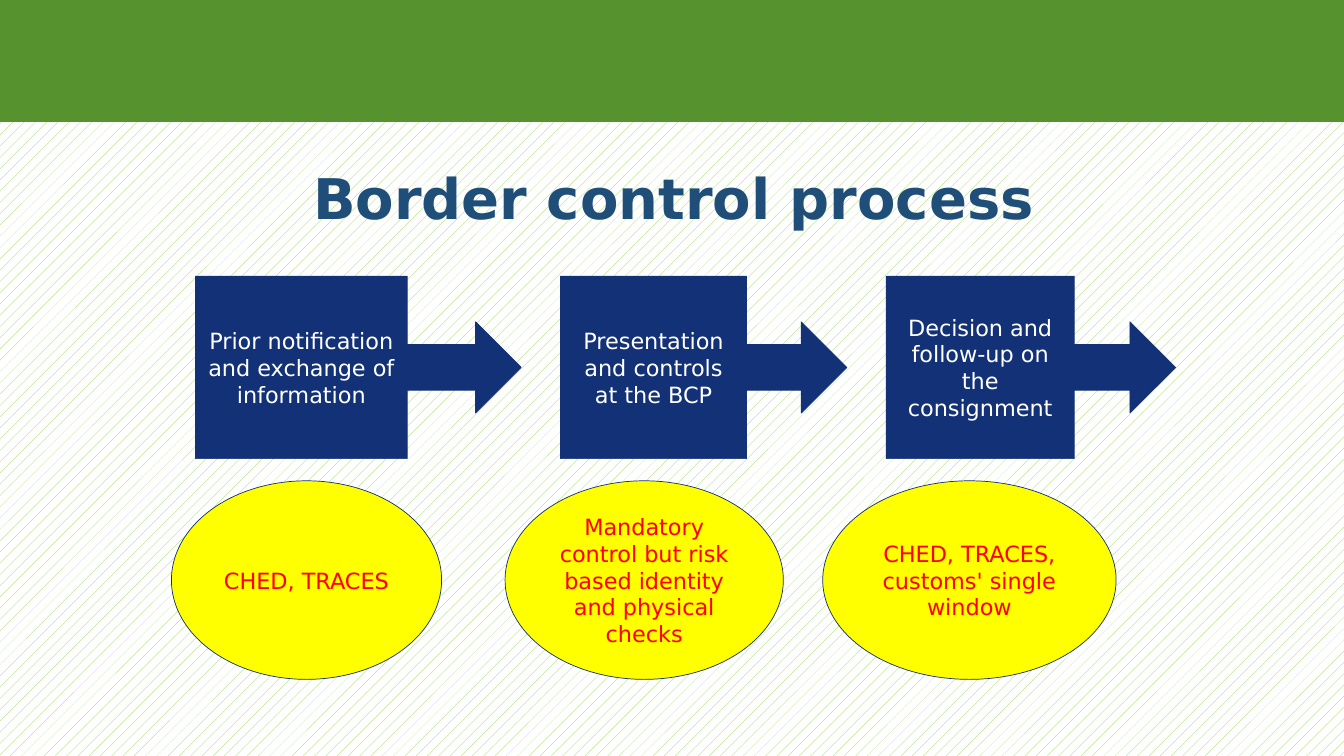
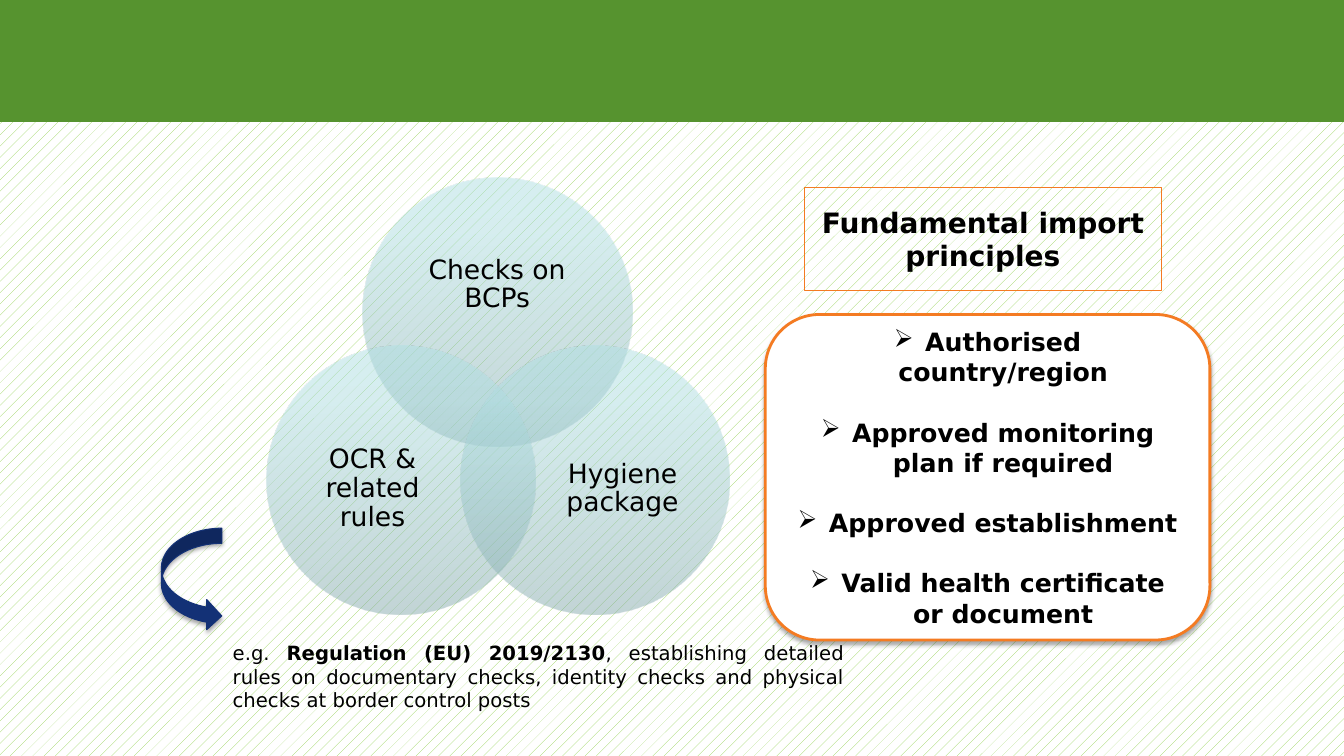
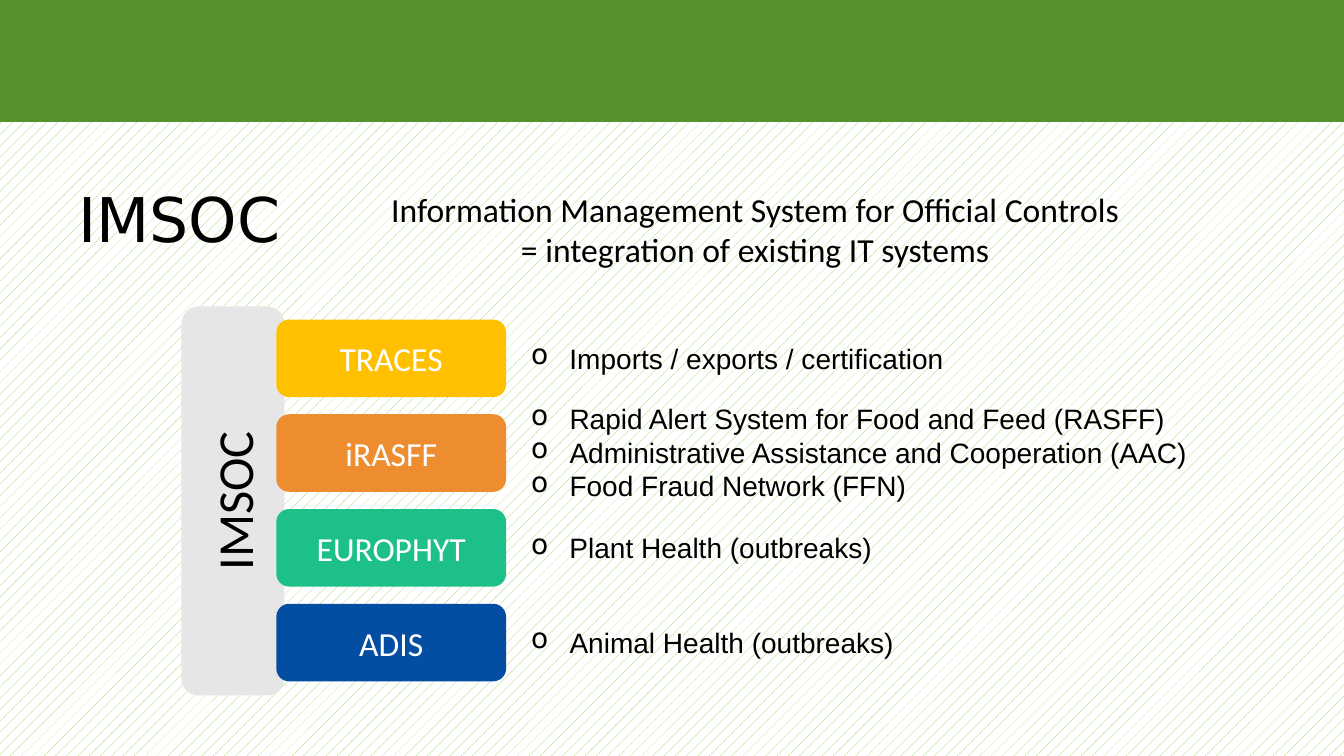
from pptx import Presentation
from pptx.dml.color import RGBColor
from pptx.enum.dml import MSO_PATTERN
from pptx.enum.shapes import MSO_SHAPE as Shape
from pptx.enum.text import MSO_ANCHOR as Anchor, MSO_AUTO_SIZE as AutoSize, PP_ALIGN as Align
from pptx.oxml import parse_xml
from pptx.oxml.ns import nsdecls, qn
from pptx.util import Inches, Pt

# Palette and fonts
BLACK = RGBColor(0x00, 0x00, 0x00)
WHITE = RGBColor(0xFF, 0xFF, 0xFF)
RED = RGBColor(0xFF, 0x00, 0x00)
YELLOW = RGBColor(0xFF, 0xFF, 0x00)
NAVY = RGBColor(0x13, 0x31, 0x76)
TITLE_BLUE = RGBColor(0x1F, 0x4E, 0x79)
BAND_GREEN = RGBColor(0x56, 0x93, 0x2F)
HATCH_GREEN = RGBColor(0x92, 0xD0, 0x50)
ORANGE = RGBColor(0xF4, 0x7B, 0x22)
GREY = RGBColor(0xE7, 0xE6, 0xE6)
GOLD = RGBColor(0xFF, 0xC0, 0x00)
AMBER = RGBColor(0xED, 0x8D, 0x2F)
TEAL = RGBColor(0x1E, 0xC0, 0x8A)
BLUE = RGBColor(0x03, 0x4E, 0xA2)
VENN_STOPS = [(0, RGBColor(0x87, 0xAB, 0xAE)), (80, RGBColor(0xAF, 0xDE, 0xE2)),
              (100, RGBColor(0xAF, 0xE0, 0xE4))]
SANS = "DejaVu Sans"
CALIBRI = "Calibri"
ARIAL = "Arial"
TITLE_ONLY, BLANK = 5, 6


def inches(values):
    return [Inches(value) for value in values]


# Text
def add_bullet(para, char, indent):
    props = para._p.get_or_add_pPr()
    props.set("marL", str(Inches(indent)))
    props.set("indent", str(-Inches(indent)))
    props.append(parse_xml(f'<a:buChar {nsdecls("a")} char="{char}"/>'))


def write(frame, paragraphs, size, font=SANS, color=BLACK, bold=False, align=Align.CENTER,
          spacing=None, bullet=None, indent=0, gap=0):
    """Each paragraph is a string, or a list of (text, bold) runs."""
    for index, content in enumerate(paragraphs):
        para = frame.add_paragraph() if index else frame.paragraphs[0]
        para.alignment = align
        if spacing:
            para.line_spacing = spacing
        if index and gap:
            para.space_before = Pt(gap)
        if bullet:
            add_bullet(para, bullet, indent)
        runs = [(content, bold)] if isinstance(content, str) else content
        for text, heavy in runs:
            span = para.add_run()
            span.text = text
            span.font.size = Pt(size)
            span.font.name = font
            span.font.bold = heavy
            span.font.color.rgb = color


def add_title(slide, text, place, **style):
    title = slide.shapes.title
    title.left, title.top, title.width, title.height = inches(place)
    title.text_frame.auto_size = AutoSize.NONE
    title.text_frame.vertical_anchor = Anchor.MIDDLE
    write(title.text_frame, [text], spacing=0.9, **style)


def add_text(shapes, place, paragraphs, size, wrap=True, anchor=Anchor.TOP, inset=None, **style):
    box = shapes.add_textbox(*inches(place))
    frame = box.text_frame
    frame.word_wrap = wrap
    frame.vertical_anchor = anchor
    if inset is not None:
        frame.margin_left = frame.margin_right = Inches(inset)
        frame.margin_top = frame.margin_bottom = Inches(inset)
    write(frame, paragraphs, size, **style)


# Shapes
def add_figure(shapes, kind, place, fill=None, line=None, weight=0.5):
    figure = shapes.add_shape(kind, *inches(place))
    figure.shadow.inherit = False
    if fill is None:
        figure.fill.background()
    else:
        figure.fill.solid()
        figure.fill.fore_color.rgb = fill
    if line is None:
        figure.line.fill.background()
    else:
        figure.line.color.rgb = line
        figure.line.width = Pt(weight)
    return figure


def add_label(figure, paragraphs, size, **style):
    figure.text_frame.word_wrap = True
    figure.text_frame.vertical_anchor = Anchor.MIDDLE
    write(figure.text_frame, paragraphs, size, **style)


def drop_shadow(figure):
    effects = figure.element.spPr.find(qn("a:effectLst"))
    effects.append(parse_xml(
        f'<a:outerShdw {nsdecls("a")} blurRad="40000" dist="23000" dir="5400000" rotWithShape="0">'
        '<a:srgbClr val="000000"><a:alpha val="35000"/></a:srgbClr></a:outerShdw>'))


def fade_upwards(figure, stops, opacity):
    marks = "".join(
        f'<a:gs pos="{position * 1000}"><a:srgbClr val="{color}">'
        f'<a:alpha val="{opacity * 1000}"/></a:srgbClr></a:gs>' for position, color in stops)
    properties = figure.element.spPr
    properties.replace(properties.find(qn("a:noFill")), parse_xml(
        f'<a:gradFill {nsdecls("a")} rotWithShape="1"><a:gsLst>{marks}</a:gsLst>'
        '<a:lin ang="16200000" scaled="0"/></a:gradFill>'))


# Shared look: hatched background and green band on the master
def style_master(deck, slide):
    master = deck.slide_master
    fill = master.background.fill
    fill.patterned()
    fill.pattern = MSO_PATTERN.PERCENT_10
    fill.fore_color.rgb = HATCH_GREEN
    fill.back_color.rgb = WHITE
    band = add_figure(slide.shapes, Shape.RECTANGLE, (0, -0.03, 13.33, 1.24), BAND_GREEN)
    master.shapes.element.insert(2, band.element)


def build_process(slide):
    add_title(slide, "Border control process", (2.18, 1.27, 9, 1.45),
              size=40, color=TITLE_BLUE, bold=True)
    # Step left and width, step text, note left and width, note text
    steps = [
        (1.94, 3.23, "Prior notification and exchange of information",
         1.7, 2.68, "CHED, TRACES"),
        (5.56, 2.84, "Presentation and controls at the BCP",
         5.01, 2.76, "Mandatory control but risk based identity and physical checks"),
        (8.79, 2.87, "Decision and follow-up on the consignment",
         8.16, 2.91, "CHED, TRACES, customs' single window"),
    ]
    for left, width, step, note_left, note_width, note in steps:
        callout = add_figure(slide.shapes, Shape.RIGHT_ARROW_CALLOUT,
                             (left, 2.74, width, 1.81), NAVY, NAVY)
        add_label(callout, [step], 16, color=WHITE)
        oval = add_figure(slide.shapes, Shape.OVAL,
                          (note_left, 4.77, note_width, 1.97), YELLOW, NAVY)
        add_label(oval, [note], 16, color=RED)


def build_principles(slide):
    # Overlapping circles
    venn = slide.shapes.add_group_shape().shapes
    circles = [
        (3.6, 1.76, (4.24, 2.4, 1.38, 0.85), "Checks on BCPs"),
        (4.57, 3.43, (5.61, 4.33, 1.13, 1.04), "Hygiene package"),
        (2.64, 3.43, (3.13, 4.33, 1.13, 1.04), "OCR & related rules"),
    ]
    for left, top, label_place, label in circles:
        circle = add_figure(venn, Shape.OVAL, (left, top, 2.67, 2.67))
        fade_upwards(circle, VENN_STOPS, 50)
        add_text(venn, label_place, [label], 19, anchor=Anchor.MIDDLE, inset=0, spacing=0.9)

    # Principles
    heading = add_figure(slide.shapes, Shape.RECTANGLE, (7.98, 1.86, 3.54, 1.02),
                         line=ORANGE, weight=0.75)
    add_label(heading, ["Fundamental import principles"], 20, bold=True)
    panel = add_figure(slide.shapes, Shape.ROUNDED_RECTANGLE, (7.59, 3.12, 4.41, 3.23),
                       WHITE, ORANGE, 2)
    drop_shadow(panel)
    add_label(panel, ["Authorised country/region", "Approved monitoring plan if required",
                      "Approved establishment", "Valid health certificate or document"],
              18, bold=True, bullet="➢", indent=0.31, gap=21.5)

    # Example
    add_text(slide.shapes, (2.21, 6.31, 6.26, 0.98), [[
        ("e.g. ", False), ("Regulation (EU) 2019/2130", True),
        (", establishing detailed rules on documentary checks, identity checks "
         "and physical checks at border control posts", False)]], 14, align=Align.JUSTIFY)
    arrow = add_figure(slide.shapes, Shape.CURVED_RIGHT_ARROW, (1.6, 5.24, 0.6, 1.02),
                       NAVY, NAVY, 0.75)
    drop_shadow(arrow)


def build_systems(slide):
    add_title(slide, "IMSOC", (0.68, 1.7, 12, 1.02), size=44, align=Align.LEFT)
    add_text(slide.shapes, (2.51, 1.82, 9.96, 0.91),
             ["Information Management System for Official Controls",
              "= integration of existing IT systems"], 24, font=CALIBRI)
    bar = add_figure(slide.shapes, Shape.ROUNDED_RECTANGLE, (1.8, 3.04, 1.02, 3.86), GREY)
    bar.element.txBody.bodyPr.set("vert", "vert270")
    add_label(bar, ["IMSOC"], 36, font=CALIBRI)

    # One row per system, its scope centred beside it
    systems = [
        ("TRACES", GOLD, 4.3, ["Imports / exports / certification"]),
        ("iRASFF", AMBER, 6.75, ["Rapid Alert System for Food and Feed (RASFF)",
                                 "Administrative Assistance and Cooperation (AAC)",
                                 "Food Fraud Network (FFN)"]),
        ("EUROPHYT", TEAL, 3.6, ["Plant Health (outbreaks)"]),
        ("ADIS", BLUE, 3.82, ["Animal Health (outbreaks)"]),
    ]
    first_top, pitch, row_height = 3.17, 0.94, 0.77
    for row, (name, color, scope_width, scope) in enumerate(systems):
        top = first_top + row * pitch
        tile = add_figure(slide.shapes, Shape.ROUNDED_RECTANGLE,
                          (2.74, top, 2.28, row_height), color)
        add_label(tile, [name], 24, font=CALIBRI, color=WHITE)
        scope_height = 0.1 + 0.34 * len(scope)
        add_text(slide.shapes,
                 (5.17, top + (row_height - scope_height) / 2, scope_width, scope_height),
                 scope, 20, wrap=False, font=ARIAL, align=Align.LEFT, bullet="o", indent=0.38)


def main():
    deck = Presentation()
    deck.slide_width, deck.slide_height = inches((13.33, 7.5))
    pages = [(TITLE_ONLY, build_process), (BLANK, build_principles), (TITLE_ONLY, build_systems)]
    for layout, build in pages:
        page = deck.slides.add_slide(deck.slide_layouts[layout])
        build(page)
    style_master(deck, deck.slides[0])
    deck.save("out.pptx")


if __name__ == "__main__":
    main()
